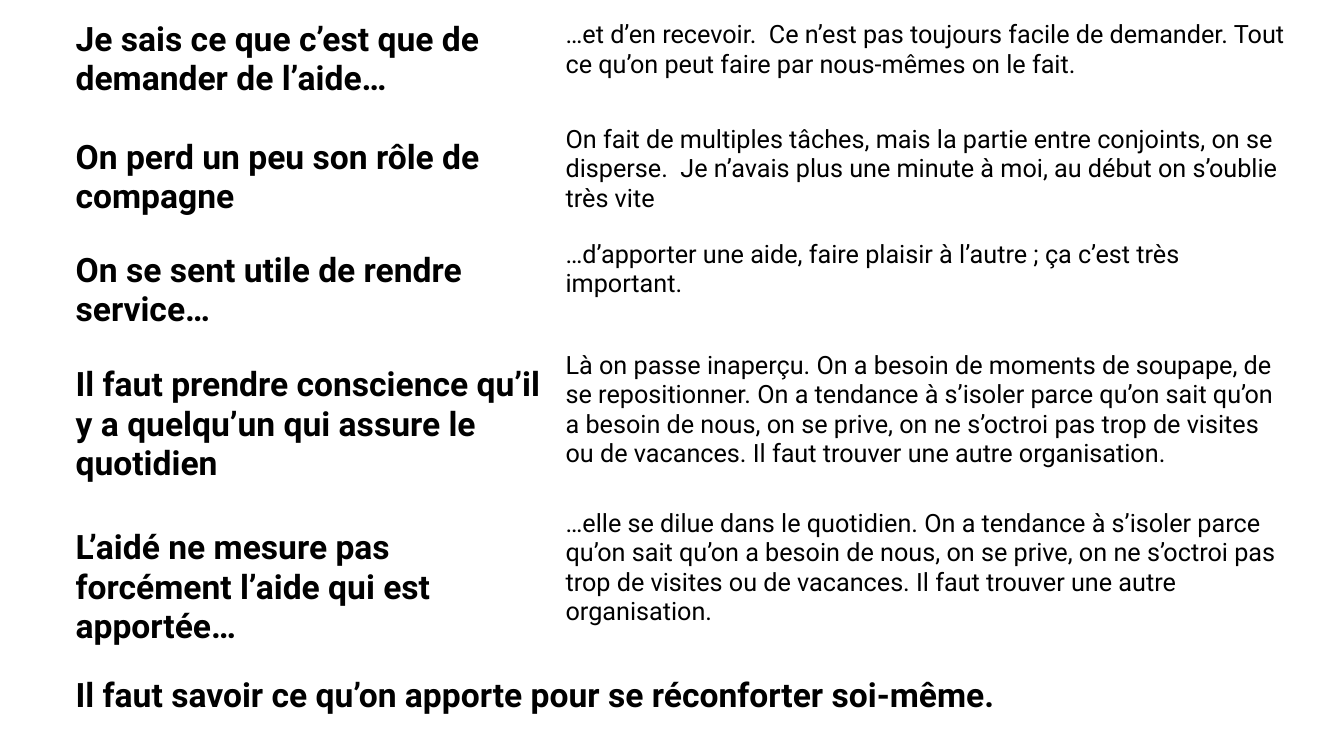
from dataclasses import dataclass

from pptx import Presentation
from pptx.dml.color import RGBColor
from pptx.enum.text import MSO_ANCHOR
from pptx.table import _Cell
from pptx.util import Inches, Pt

TOP, MIDDLE = MSO_ANCHOR.TOP, MSO_ANCHOR.MIDDLE
COLORS = {"text": "000000"}
FONT = "Roboto"
COLUMN_WIDTHS = (4.86, 7.41)


@dataclass(frozen=True)
class Testimony:
    height: float
    statement: str
    detail: str = ""


TESTIMONIES = (
    Testimony(1.04, "Je sais ce que c’est que de demander de l’aide…",
              "…et d’en recevoir.  Ce n’est pas toujours facile de demander. "
              "Tout ce qu’on peut faire par nous-mêmes on le fait."),
    Testimony(1.14, "On perd un peu son rôle de compagne",
              "On fait de multiples tâches, mais la partie entre conjoints, "
              "on se disperse.  Je n’avais plus une minute à moi, "
              "au début on s’oublie très vite"),
    Testimony(1.1, "On se sent utile de rendre service…",
              "…d’apporter une aide, faire plaisir à l’autre ; "
              "ça c’est très important."),
    Testimony(1.57, "Il faut prendre conscience qu’il y a quelqu’un qui assure le quotidien",
              "Là on passe inaperçu. On a besoin de moments de soupape, "
              "de se repositionner. On a tendance à s’isoler parce qu’on sait "
              "qu’on a besoin de nous, on se prive, on ne s’octroi pas trop de "
              "visites ou de vacances. Il faut trouver une autre organisation."),
    Testimony(1.66, "L’aidé ne mesure pas forcément l’aide qui est apportée…",
              "…elle se dilue dans le quotidien. On a tendance à s’isoler parce "
              "qu’on sait qu’on a besoin de nous, on se prive, on ne s’octroi pas "
              "trop de visites ou de vacances. Il faut trouver une autre organisation."),
    Testimony(0.8, "Il faut savoir ce qu’on apporte pour se réconforter soi-même."),
)


def write_cell(cell: _Cell, text: str, size: int, bold: bool, anchor: MSO_ANCHOR) -> None:
    cell.fill.background()
    cell.vertical_anchor = anchor
    if not text:
        return
    r = cell.text_frame.paragraphs[0].add_run()
    r.text = text
    r.font.name = FONT
    r.font.size = Pt(size)
    r.font.bold = bold
    r.font.color.rgb = RGBColor.from_string(COLORS["text"])


def main() -> None:
    prs = Presentation()
    prs.slide_width, prs.slide_height = Inches(13.33), Inches(7.5)
    s = prs.slides.add_slide(prs.slide_layouts[6])

    height = sum(t.height for t in TESTIMONIES)
    table = s.shapes.add_table(
        len(TESTIMONIES), len(COLUMN_WIDTHS), Inches(0.65), Inches(0.15),
        Inches(sum(COLUMN_WIDTHS)), Inches(height)).table
    table.first_row = False
    table.horz_banding = False
    for column, width in zip(table.columns, COLUMN_WIDTHS):
        column.width = Inches(width)

    for i, testimony in enumerate(TESTIMONIES):
        table.rows[i].height = Inches(testimony.height)
        write_cell(table.cell(i, 0), testimony.statement, 24, True, MIDDLE if i else TOP)
        write_cell(table.cell(i, 1), testimony.detail, 18, False, TOP)

    conclusion = table.cell(len(TESTIMONIES) - 1, 0)
    conclusion.merge(table.cell(len(TESTIMONIES) - 1, 1))
    conclusion.margin_bottom = Inches(0.35)

    prs.save("out.pptx")


if __name__ == "__main__":
    main()
